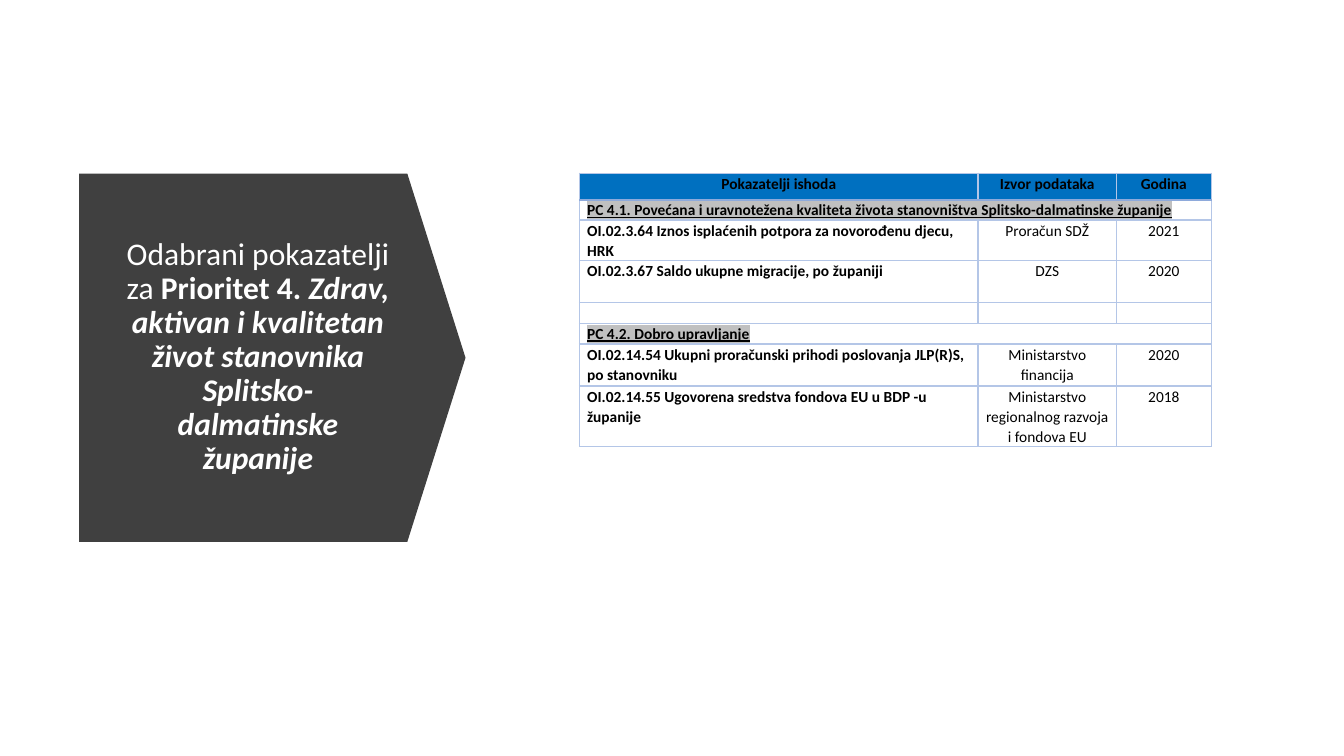
"""Builds a slide with the outcome indicators chosen for Priority 4."""
from lxml import etree
from pptx import Presentation
from pptx.dml.color import RGBColor
from pptx.enum.shapes import MSO_SHAPE
from pptx.enum.text import MSO_ANCHOR, PP_ALIGN
from pptx.oxml.ns import qn
from pptx.util import Pt

DOWN_ARROW = MSO_SHAPE.DOWN_ARROW
MIDDLE = MSO_ANCHOR.MIDDLE
LEFT, CENTER = PP_ALIGN.LEFT, PP_ALIGN.CENTER

WHITE = RGBColor(0xFF, 0xFF, 0xFF)
BLACK = RGBColor(0, 0, 0)
CHARCOAL = RGBColor(0x40, 0x40, 0x40)
BLUE = RGBColor(0, 0x70, 0xC0)
GRID = RGBColor(0xB4, 0xC6, 0xE7)
HEADER_RULE = RGBColor(0x8E, 0xAA, 0xDB)
HIGHLIGHT = RGBColor(0xC0, 0xC0, 0xC0)

TITLE = [
    ("Odabrani pokazatelji za ", False, False),
    ("Prioritet 4. ", True, False),
    ("Zdrav, aktivan i kvalitetan život stanovnika Splitsko-dalmatinske županije", True, True),
]
COL_WIDTHS = [284.6, 99, 67.5]
ROWS = [
    (18.9, ["Pokazatelji ishoda", "Izvor podataka", "Godina"]),
    (14.5, ["PC 4.1. Povećana i uravnotežena kvaliteta života stanovništva "
            "Splitsko-dalmatinske županije"]),
    (29, ["OI.02.3.64 Iznos isplaćenih potpora za novorođenu djecu, HRK",
          "Proračun SDŽ", "2021"]),
    (30, ["OI.02.3.67 Saldo ukupne migracije, po županiji", "DZS", "2020"]),
    (14.8, ["", "", ""]),
    (14.8, ["PC 4.2. Dobro upravljanje"]),
    (30, ["OI.02.14.54 Ukupni proračunski prihodi poslovanja JLP(R)S, po stanovniku",
          "Ministarstvo financija", "2020"]),
    (43, ["OI.02.14.55 Ugovorena sredstva fondova EU u BDP -u županije",
          "Ministarstvo regionalnog razvoja i fondova EU", "2018"]),
]


class SlideBuilder:
    """Holds the text style and the current slide."""

    font_name = "Calibri"
    title_size = 22.5
    table_size = 11

    def __init__(self, slide):
        self.slide = slide

    def style(self, p, size, color, align, spacing, bold=None):
        """Sets the shared look of a paragraph."""
        p.alignment = align
        p.line_spacing = spacing
        p.font.name = self.font_name
        p.font.size = Pt(size)
        p.font.color.rgb = color
        p.font.bold = bold

    def arrow(self, x, y, w, h):
        """Adds the wide arrow block pointing right."""
        sp = self.slide.shapes.add_shape(DOWN_ARROW, Pt(x), Pt(y), Pt(w), Pt(h))
        sp.rotation = 270
        sp.adjustments[0] = 1
        sp.adjustments[1] = 0.158
        sp.shadow.inherit = False
        sp.fill.solid()
        sp.fill.fore_color.rgb = CHARCOAL
        sp.line.fill.background()

    def title(self, x, y, w, h, runs):
        """Adds the centred title from (text, bold, italic) runs."""
        tf = self.slide.shapes.add_textbox(Pt(x), Pt(y), Pt(w), Pt(h)).text_frame
        tf.word_wrap = True
        tf.vertical_anchor = MIDDLE
        p = tf.paragraphs[0]
        self.style(p, self.title_size, WHITE, CENTER, 0.9)
        for text, bold, italic in runs:
            r = p.add_run()
            r.text = text
            r.font.bold = bold
            r.font.italic = italic

    def border(self, cell, side, color, width):
        """Draws one edge of a cell."""
        ln = etree.SubElement(cell._tc.get_or_add_tcPr(), qn(f"a:ln{side}"), w=str(Pt(width)))
        fill = etree.SubElement(ln, qn("a:solidFill"))
        etree.SubElement(fill, qn("a:srgbClr"), val=str(color))

    def cell(self, cell, row, col, text, section):
        """Formats one cell and writes its text."""
        cell.margin_left = cell.margin_right = Pt(5.4)
        cell.margin_top = cell.margin_bottom = 0
        for side in "LRTB":
            under_header = (row, side) in ((0, "B"), (1, "T"))
            self.border(cell, side, *((HEADER_RULE, 1.5) if under_header else (GRID, 1)))
        if row == 0:
            cell.fill.solid()
            cell.fill.fore_color.rgb = BLUE
        else:
            cell.fill.background()
        p = cell.text_frame.paragraphs[0]
        align = CENTER if row == 0 or col else LEFT
        self.style(p, self.table_size, BLACK, align, 1.07, row == 0 or col == 0)
        p.space_after = Pt(8)
        if not text:
            etree.SubElement(p._p, qn("a:endParaRPr"), sz=str(self.table_size * 100))
            return
        r = p.add_run()
        r.text = text
        if section:
            r.font.underline = True
            mark = etree.SubElement(r.font._element, qn("a:highlight"))
            etree.SubElement(mark, qn("a:srgbClr"), val=str(HIGHLIGHT))

    def table(self, x, y, widths, rows):
        """Adds the table; a row with a single text spans all columns."""
        height = sum(h for h, _ in rows)
        table = self.slide.shapes.add_table(
            len(rows), len(widths), Pt(x), Pt(y), Pt(sum(widths)), Pt(height)).table
        table.first_row = table.horz_banding = False
        for col, width in enumerate(widths):
            table.columns[col].width = Pt(width)
        for row, (h, texts) in enumerate(rows):
            table.rows[row].height = Pt(h)
            section = len(texts) == 1
            if section:
                table.cell(row, 0).merge(table.cell(row, len(widths) - 1))
            for col in range(len(widths)):
                text = texts[col] if col < len(texts) else ""
                self.cell(table.cell(row, col), row, col, text, section)


def main():
    """Creates the presentation and saves it."""
    prs = Presentation()
    prs.slide_width, prs.slide_height = Pt(960), Pt(540)
    s = SlideBuilder(prs.slides.add_slide(prs.slide_layouts[6]))
    s.arrow(63, 117.5, 263, 276)
    s.title(80.6, 154.8, 207.4, 200.9, TITLE)
    s.table(414, 123.8, COL_WIDTHS, ROWS)
    prs.save("out.pptx")


if __name__ == "__main__":
    main()
